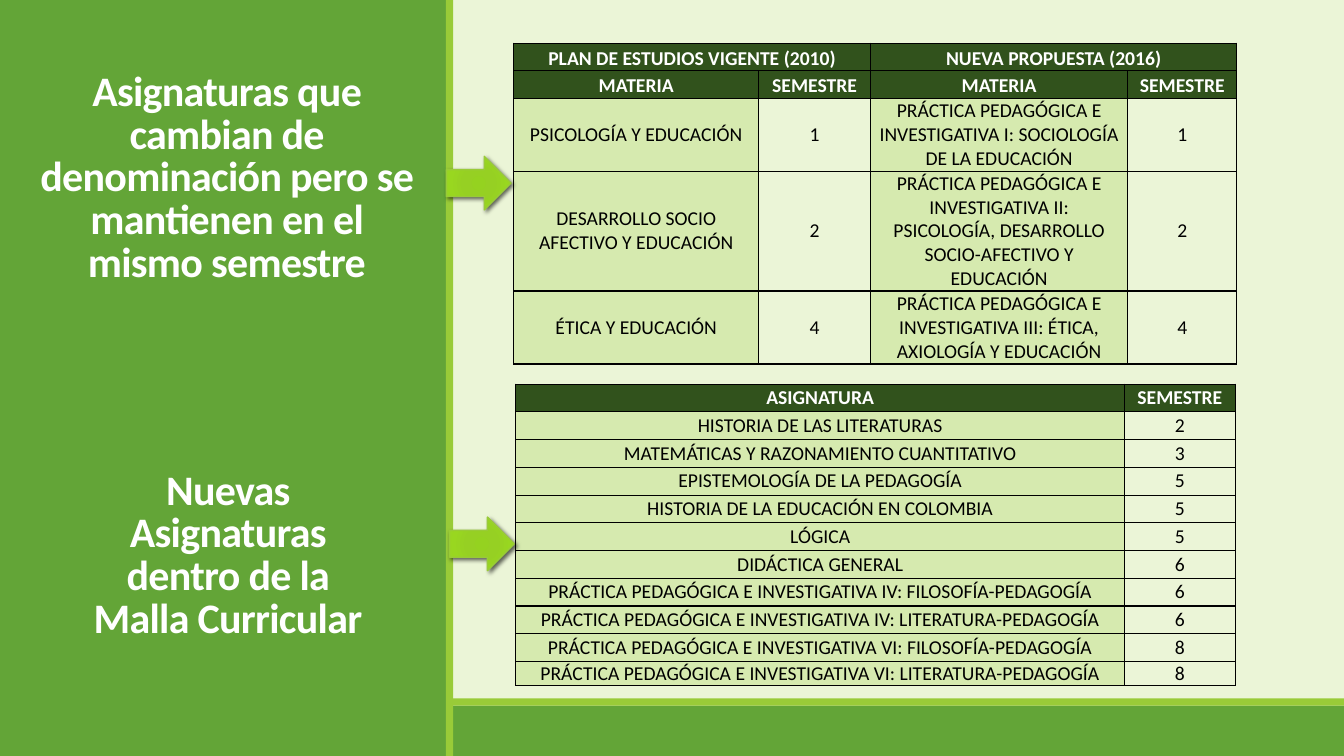
from pptx import Presentation
from pptx.dml.color import RGBColor
from pptx.enum.shapes import MSO_SHAPE
from pptx.enum.text import MSO_ANCHOR, MSO_AUTO_SIZE, PP_ALIGN
from pptx.oxml import parse_xml
from pptx.oxml.ns import nsdecls, qn
from pptx.util import Cm, Pt

RECTANGLE, RIGHT_ARROW = MSO_SHAPE.RECTANGLE, MSO_SHAPE.RIGHT_ARROW
MIDDLE, BOTTOM = MSO_ANCHOR.MIDDLE, MSO_ANCHOR.BOTTOM
CENTER, NO_AUTOFIT = PP_ALIGN.CENTER, MSO_AUTO_SIZE.NONE

SLIDE_W, SLIDE_H = 33.87, 19.05
PANEL_W, FOOTER_H, STRIP = 11.24, 1.27, 0.18
GREEN, LIME, DARK_GREEN = "63A537", "99CB38", "31521C"
PALE, SOFT, WHITE, BLACK = "EBF5D7", "D6EAAF", "FFFFFF", "000000"

HEADING_FONT = {"name": "Calibri", "size": Pt(30), "bold": True}
HEADER_FONT = {"name": "Calibri", "size": Pt(14), "bold": True}
BODY_FONT = {"name": "Calibri", "size": Pt(14), "bold": False}
CELL_FORMAT = {"vertical_anchor": MIDDLE, "margin_left": Cm(0.18),
               "margin_right": Cm(0.18), "margin_top": 0, "margin_bottom": 0}

ARROW_STOPS = [(0, "95D220"), (34, "96D023"), (70, "99D720"), (100, "9BD231")]

RENAMED_ROWS = [
    ("PLAN DE ESTUDIOS VIGENTE (2010)", "", "NUEVA PROPUESTA (2016)", ""),
    ("MATERIA", "SEMESTRE", "MATERIA", "SEMESTRE"),
    ("PSICOLOGÍA Y EDUCACIÓN", "1",
     "PRÁCTICA PEDAGÓGICA E INVESTIGATIVA I: SOCIOLOGÍA DE LA EDUCACIÓN", "1"),
    ("DESARROLLO SOCIO AFECTIVO Y EDUCACIÓN", "2",
     "PRÁCTICA PEDAGÓGICA E INVESTIGATIVA II: PSICOLOGÍA, DESARROLLO "
     "SOCIO-AFECTIVO Y EDUCACIÓN", "2"),
    ("ÉTICA Y EDUCACIÓN", "4",
     "PRÁCTICA PEDAGÓGICA E INVESTIGATIVA III: ÉTICA, AXIOLOGÍA Y EDUCACIÓN", "4"),
]
NEW_ROWS = [
    ("ASIGNATURA", "SEMESTRE"),
    ("HISTORIA DE LAS LITERATURAS", "2"),
    ("MATEMÁTICAS Y RAZONAMIENTO CUANTITATIVO", "3"),
    ("EPISTEMOLOGÍA DE LA PEDAGOGÍA", "5"),
    ("HISTORIA DE LA EDUCACIÓN EN COLOMBIA", "5"),
    ("LÓGICA", "5"),
    ("DIDÁCTICA GENERAL", "6"),
    ("PRÁCTICA PEDAGÓGICA E INVESTIGATIVA IV: FILOSOFÍA-PEDAGOGÍA", "6"),
    ("PRÁCTICA PEDAGÓGICA E INVESTIGATIVA IV: LITERATURA-PEDAGOGÍA", "6"),
    ("PRÁCTICA PEDAGÓGICA E INVESTIGATIVA VI: FILOSOFÍA-PEDAGOGÍA", "8"),
    ("PRÁCTICA PEDAGÓGICA E INVESTIGATIVA VI: LITERATURA-PEDAGOGÍA", "8"),
]


def rgb(hex_color):
    return RGBColor.from_string(hex_color)


def apply(target, values):
    for name, value in values.items():
        setattr(target, name, value)


def paint(target, color):
    target.fill.solid()
    target.fill.fore_color.rgb = rgb(color)


def add_block(slide, box, color):
    block = slide.shapes.add_shape(RECTANGLE, *map(Cm, box))
    block.shadow.inherit = False
    paint(block, color)
    block.line.fill.background()


def add_backdrop(slide, width, height):
    """Page colour, footer bar and left panel, each bar with its lime strip."""
    paint(slide.background, PALE)
    footer_top = height - FOOTER_H
    add_block(slide, (0, footer_top, width, FOOTER_H), GREEN)
    add_block(slide, (0, footer_top - STRIP, width, STRIP), LIME)
    add_block(slide, (0, 0, PANEL_W, height), GREEN)
    add_block(slide, (PANEL_W, 0, STRIP, height), LIME)


def write_heading(heading, box, text):
    left, top, width, height = map(Cm, box)
    apply(heading, {"left": left, "top": top, "width": width, "height": height})
    frame = heading.text_frame
    frame.text = text
    apply(frame, {"word_wrap": True, "auto_size": NO_AUTOFIT,
                  "vertical_anchor": BOTTOM})
    paragraph = frame.paragraphs[0]
    apply(paragraph, {"alignment": CENTER, "line_spacing": 0.85})
    font = paragraph.runs[0].font
    apply(font, HEADING_FONT)
    font.color.rgb = rgb(WHITE)
    paragraph.runs[0]._r.get_or_add_rPr().set("spc", "-50")


def add_borders(cell):
    properties = cell._tc.get_or_add_tcPr()
    for position, side in enumerate(("lnL", "lnR", "lnT", "lnB")):
        properties.insert(position, parse_xml(
            f'<a:{side} {nsdecls("a")} w="12700"><a:solidFill>'
            f'<a:srgbClr val="{BLACK}"/></a:solidFill></a:{side}>'))


def fill_cell(cell, text, fill, is_header, line_spacing):
    cell.text = text
    apply(cell, CELL_FORMAT)
    paint(cell, fill)
    add_borders(cell)
    paragraph = cell.text_frame.paragraphs[0]
    apply(paragraph, {"alignment": CENTER, "line_spacing": line_spacing})
    apply(paragraph.font, HEADER_FONT if is_header else BODY_FONT)
    paragraph.font.color.rgb = rgb(WHITE if is_header else BLACK)


def add_subject_table(slide, left, top, rows, widths, heights, header_rows,
                      header_spacing=1.0):
    """Subject columns are tinted; the semester columns between them are pale."""
    table = slide.shapes.add_table(
        len(rows), len(widths), Cm(left), Cm(top),
        Cm(sum(widths)), Cm(sum(heights))).table
    apply(table, {"first_row": False, "horz_banding": False})
    for column, width in zip(table.columns, widths):
        column.width = Cm(width)
    for r, (values, height) in enumerate(zip(rows, heights)):
        table.rows[r].height = Cm(height)
        is_header = r < header_rows
        for c, text in enumerate(values):
            fill = DARK_GREEN if is_header else (SOFT, PALE)[c % 2]
            fill_cell(table.cell(r, c), text, fill, is_header,
                      header_spacing if is_header else 1.0)
    return table


def add_pointer(slide, left, top):
    """Lime arrow with a radial gradient and a soft shadow."""
    arrow = slide.shapes.add_shape(RIGHT_ARROW, Cm(left), Cm(top), Cm(1.63), Cm(1.35))
    arrow.line.color.rgb = rgb(LIME)
    arrow.line.width = Pt(1)
    stops = "".join(f'<a:gs pos="{at * 1000}"><a:srgbClr val="{color}"/></a:gs>'
                    for at, color in ARROW_STOPS)
    outline = arrow._element.spPr.find(qn("a:ln"))
    outline.addprevious(parse_xml(
        f'<a:gradFill {nsdecls("a")}><a:gsLst>{stops}</a:gsLst><a:path path="circle">'
        '<a:fillToRect l="100000" t="100000" r="100000" b="100000"/>'
        '</a:path></a:gradFill>'))
    outline.addnext(parse_xml(
        f'<a:effectLst {nsdecls("a")}><a:outerShdw blurRad="38100" dist="25400" '
        f'dir="2700000"><a:srgbClr val="{BLACK}"><a:alpha val="60000"/></a:srgbClr>'
        '</a:outerShdw></a:effectLst>'))


def build_subjects_slide(deck):
    slide = deck.slides.add_slide(deck.slide_layouts[5])
    add_backdrop(slide, SLIDE_W, SLIDE_H)

    renamed = add_subject_table(
        slide, 12.95, 1.09, RENAMED_ROWS, (6.17, 2.82, 6.48, 2.75),
        (0.69, 0.69, 1.84, 3.02, 1.84), header_rows=2, header_spacing=1.15)
    for first in (0, 2):
        renamed.cell(0, first).merge(renamed.cell(0, first + 1))
    add_subject_table(slide, 13, 9.68, NEW_ROWS, (15.34, 2.79),
                      [0.7] * 10 + [0.6], header_rows=1)

    title = slide.shapes.title
    slide.shapes._spTree.append(title._element)
    write_heading(title, (1.73, 10.39, 8.03, 5.92),
                  "Nuevas Asignaturas dentro de la Malla Curricular")
    renamed_heading = slide.shapes.add_textbox(0, 0, 0, 0)
    write_heading(renamed_heading, (0.71, 0.84, 10.01, 6.5),
                  "Asignaturas que cambian de denominación pero se mantienen "
                  "en el mismo semestre")

    add_pointer(slide, 11.25, 3.94)
    add_pointer(slide, 11.33, 13.03)


def main():
    deck = Presentation()
    apply(deck, {"slide_width": Cm(SLIDE_W), "slide_height": Cm(SLIDE_H)})
    build_subjects_slide(deck)
    deck.save("out.pptx")


if __name__ == "__main__":
    main()
